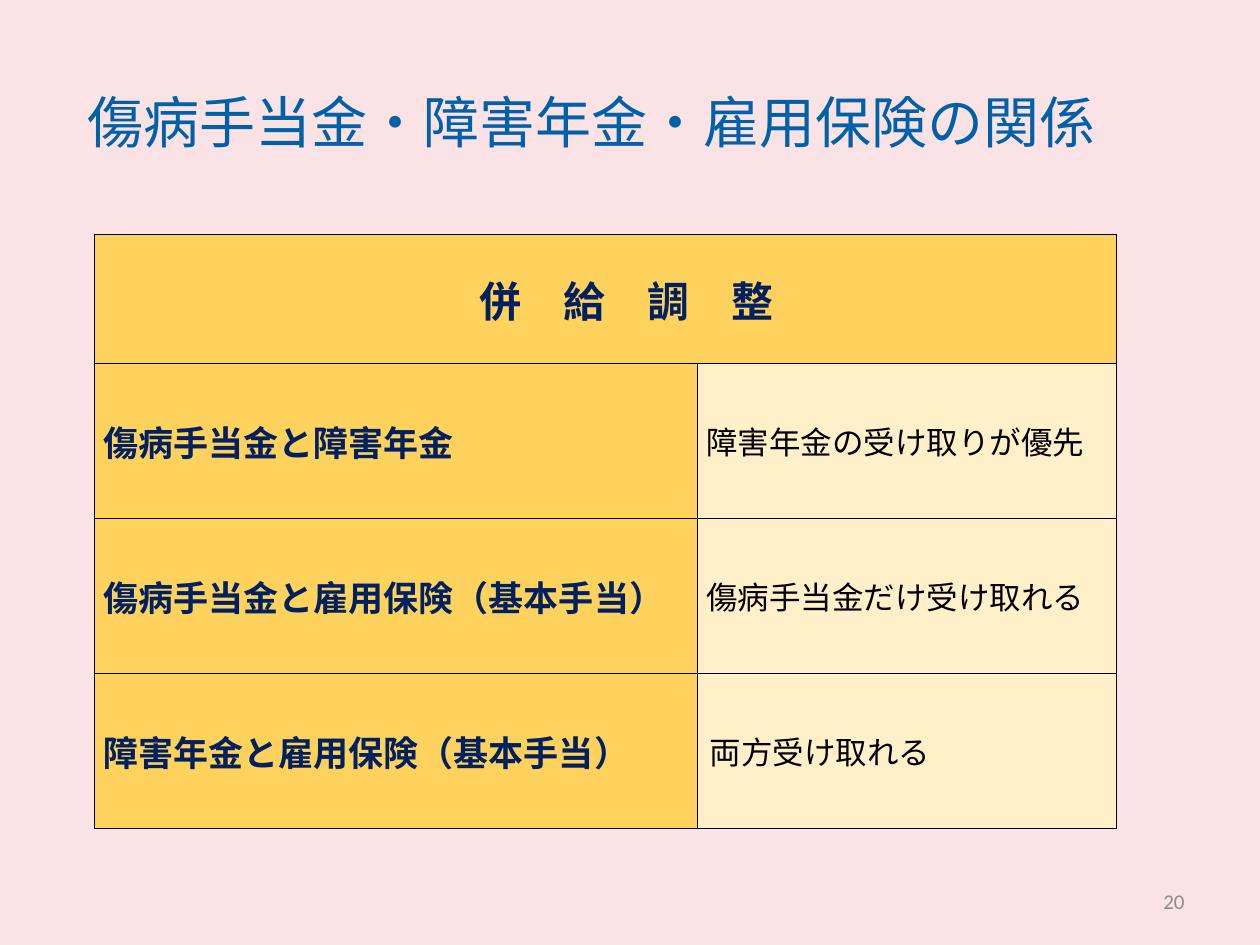
from pptx import Presentation
from pptx.dml.color import RGBColor as RGB
from pptx.enum.text import MSO_ANCHOR as ANCHOR, PP_ALIGN as ALIGN
from pptx.oxml import parse_xml
from pptx.oxml.ns import nsdecls
from pptx.util import Inches, Pt

COLORS = dict(back="FAE2E5", title="0060A8", navy="002060", black="000000",
              gold="FFD25D", cream="FFF0C9", gray="8C8C8C")
SANS = "Noto Sans CJK JP"
ROWS = [("傷病手当金と障害年金", "障害年金の受け取りが優先"),
        ("傷病手当金と雇用保険（基本手当）", "傷病手当金だけ受け取れる"),
        ("障害年金と雇用保険（基本手当）", "両方受け取れる")]


class Deck:
    """Slide with its style; lengths are shares of the slide's size."""

    def __init__(self, width, height):
        self.prs = Presentation()
        self.prs.slide_width, self.prs.slide_height = Inches(width), Inches(height)
        self.s = self.prs.slides.add_slide(self.prs.slide_layouts[5])
        fill = self.s.background.fill
        fill.solid()
        fill.fore_color.rgb = RGB.from_string(COLORS["back"])

    def x(self, share):
        return round(self.prs.slide_width * share)

    def y(self, share):
        return round(self.prs.slide_height * share)

    def box(self, left, top, width, height):
        return self.x(left), self.y(top), self.x(width), self.y(height)

    def text(self, tf, words, size, color, align, bold=False, font=SANS, after=0):
        p = tf.paragraphs[0]
        p.text, p.alignment, p.space_after = words, align, Pt(after)
        for f in (p.font, p.runs[0].font):
            f.size, f.bold, f.name = Pt(size), bold, font
            f.color.rgb = RGB.from_string(COLORS[color])
        p.runs[0]._r.rPr.append(parse_xml(f'<a:ea {nsdecls("a")} typeface="{font}"/>'))

    def title(self, words, box, lift):
        sp = self.s.shapes.title
        sp.left, sp.top, sp.width, sp.height = self.box(*box)
        tf = sp.text_frame
        tf.vertical_anchor, tf.word_wrap = ANCHOR.MIDDLE, True
        tf.margin_bottom = self.y(lift)
        self.text(tf, words, 32, "title", ALIGN.CENTER, after=5.3)

    def number(self, words, box):
        tf = self.s.shapes.add_textbox(*self.box(*box)).text_frame
        tf.word_wrap, tf.vertical_anchor = True, ANCHOR.MIDDLE
        self.text(tf, words, 12, "gray", ALIGN.RIGHT, font="Calibri")

    def cell(self, cell, fill, margin=0.07):
        for side in "LRTB":
            cell._tc.get_or_add_tcPr().append(parse_xml(
                f'<a:ln{side} {nsdecls("a")} w="12700"><a:solidFill>'
                f'<a:srgbClr val="{COLORS["black"]}"/></a:solidFill></a:ln{side}>'))
        cell.fill.solid()
        cell.fill.fore_color.rgb = RGB.from_string(COLORS[fill])
        cell.vertical_anchor = ANCHOR.MIDDLE
        cell.margin_left = cell.margin_right = Inches(margin)
        cell.margin_top = cell.margin_bottom = 0

    def table(self, heading, rows, box, split, head):
        left, top, width, height = self.box(*box)
        table = self.s.shapes.add_table(len(rows) + 1, 2, left, top, width, height).table
        for column, share in zip(table.columns, (split, 1 - split)):
            column.width = round(width * share)
        for i, row in enumerate(table.rows):
            row.height = round(height * ((1 - head) / len(rows) if i else head))
        for c in (0, 1):
            self.cell(table.cell(0, c), "gold")
        table.cell(0, 0).merge(table.cell(0, 1))
        self.text(table.cell(0, 0).text_frame, heading, 24, "navy",
                  ALIGN.CENTER, True, after=5.3)
        for i, (label, result) in enumerate(rows, 1):
            last = i == len(rows)
            self.cell(table.cell(i, 0), "gold")
            self.cell(table.cell(i, 1), "cream", 0.1 if last else 0.07)
            self.text(table.cell(i, 0).text_frame, label, 20, "navy",
                      ALIGN.JUSTIFY, True, after=5.3)
            self.text(table.cell(i, 1).text_frame, result, 18, "black",
                      ALIGN.LEFT if last else ALIGN.JUSTIFY, after=0 if last else 5.3)


def main():
    deck = Deck(10, 7.5)
    deck.title("傷病手当金・障害年金・雇用保険の関係", (0, 0.08, 0.94, 0.19), 0.1)
    deck.table("　併　給　調　整", ROWS, (0.075, 0.248, 0.811, 0.629), 0.59, 0.217)
    deck.number("20", (0.717, 0.927, 0.233, 0.053))
    deck.prs.save("out.pptx")


if __name__ == "__main__":
    main()
